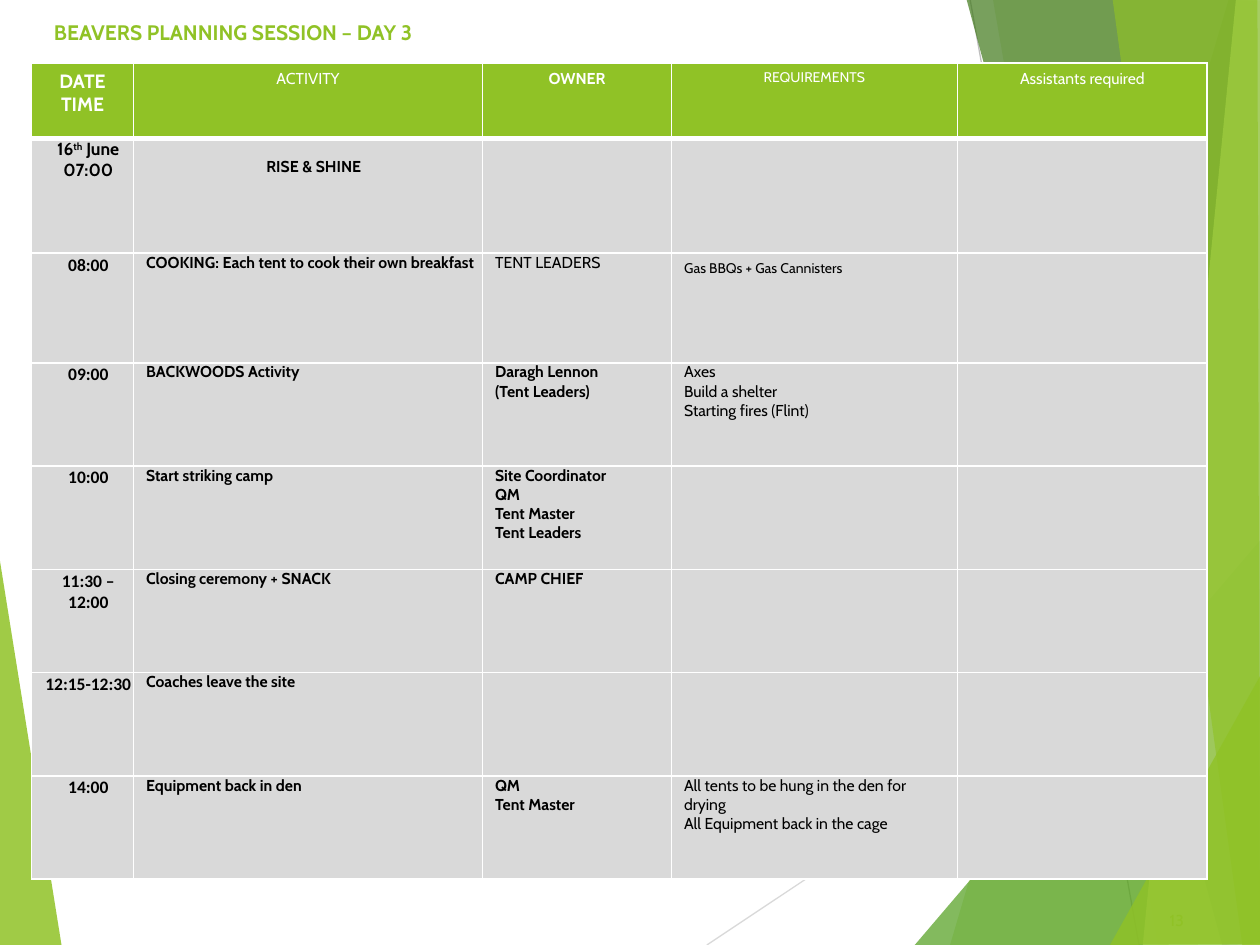
from dataclasses import dataclass, replace

from lxml import etree
from pptx import Presentation
from pptx.dml.color import RGBColor
from pptx.enum.shapes import MSO_CONNECTOR as Link
from pptx.enum.text import MSO_ANCHOR as Anchor, PP_ALIGN as Align
from pptx.oxml.ns import qn
from pptx.util import Inches, Pt

GREEN, GREY, WHITE, BLACK = "90C226", "D9D9D9", "FFFFFF", "000000"


@dataclass(frozen=True)
class Facet:
    points: tuple
    color: str
    alpha: int


@dataclass(frozen=True)
class Ray:
    start: tuple
    end: tuple
    color: str


@dataclass(frozen=True)
class Style:
    size: float
    bold: bool = True
    color: str = BLACK
    face: str = "Cabin"
    align: Align = Align.LEFT
    inset: tuple = (0.1, 0.05, 0.1, 0.05)


@dataclass(frozen=True)
class Entry:
    text: str
    style: Style


HEAD = Style(9, False, WHITE, align=Align.CENTER)
TIME = Style(10, face="Calibri", align=Align.CENTER, inset=(0.1, 0.01, 0.01, 0))
DATE = replace(TIME, face="Cabin", inset=(0.1, 0, 0.01, 0))
TASK = Style(9, inset=(0.1, 0, 0.07, 0))
RISE = replace(TASK, align=Align.CENTER, inset=(0.1, 0.15, 0.01, 0))
OWNER = Style(9, inset=(0.1, 0, 0.1, 0.05))
NEED = replace(OWNER, bold=False)
TITLE = Style(12, color=GREEN)

LEFT = Facet(((-0.01, 4.39), (0.49, 7.51), (-0.01, 7.5)), GREEN, 85)
RAYS = [
    Ray((5.61, 7.5), (10.01, 4.57), "D9D9D9"),
    Ray((7.7, 0), (9.04, 7.5), "BFBFBF"),
]
RIGHT = [
    Facet(((9.75, 0), (7.54, 7.5), (10.02, 7.51), (10.01, 0.01)), GREEN, 30),
    Facet(((7.88, -0.01), (9.19, 7.5), (10.01, 7.5), (10.01, -0.01)), GREEN, 20),
    Facet(((7.26, 7.5), (10, 4.29), (10.01, 7.5)), "54A021", 72),
    Facet(((7.67, -0.01), (9.7, 7.5), (10.01, 7.49), (10.01, -0.01)), "3F7819", 70),
    Facet(((9.81, -0.01), (9.07, 7.5), (10.01, 7.5), (10, -0.01)), "C0E474", 70),
    Facet(((8.83, -0.01), (9.86, 7.5), (10, 7.5), (9.98, -0.01)), GREEN, 65),
    Facet(((8.81, 7.5), (10.01, 5.35), (10.01, 7.49)), GREEN, 80),
]

WIDTHS = [0.81, 2.77, 1.5, 2.27, 1.98]
HEIGHTS = [0.6, 0.91, 0.87] + [0.82] * 5
HEADS = [
    Entry("DATE\nTIME", replace(HEAD, size=11, bold=True)),
    Entry("ACTIVITY", HEAD),
    Entry("OWNER", replace(HEAD, bold=True)),
    Entry("REQUIREMENTS", replace(HEAD, size=8)),
    Entry("Assistants required", HEAD),
]
# A part between carets is raised.
FIRST = [Entry("16^th^ June\n07:00", DATE), Entry("RISE & SHINE", RISE)]
COOK = [
    Entry("08:00", TIME),
    Entry("COOKING: Each tent to cook their own breakfast", TASK),
    Entry("TENT LEADERS", NEED),
    Entry("Gas BBQs + Gas Cannisters", Style(8, False)),
]
PLAN = [
    ("09:00", "BACKWOODS Activity", "Daragh Lennon\n(Tent Leaders)",
     "Axes\nBuild a shelter\nStarting fires (Flint)"),
    ("10:00", "Start striking camp",
     "Site Coordinator\nQM\nTent Master\nTent Leaders"),
    ("11:30 – 12:00", "Closing ceremony + SNACK", "CAMP CHIEF"),
    ("12:15-12:30", "Coaches leave the site"),
    ("14:00", "Equipment back in den", "QM\nTent Master",
     "All tents to be hung in the den for drying\nAll Equipment back in the cage"),
]


def rgb(color: str) -> RGBColor:
    return RGBColor.from_string(color)


def draw_facet(slide, facet: Facet) -> None:
    points = [(Inches(x), Inches(y)) for x, y in facet.points]
    pen = slide.shapes.build_freeform(*points[0])
    pen.add_line_segments(points[1:], close=True)
    shape = pen.convert_to_shape()
    shape.shadow.inherit = False
    shape.line.fill.background()
    shape.fill.solid()
    shape.fill.fore_color.rgb = rgb(facet.color)
    tint = shape.element.spPr.find(f"{qn('a:solidFill')}/{qn('a:srgbClr')}")
    etree.SubElement(tint, qn("a:alpha")).set("val", str(facet.alpha * 1000))


def draw_ray(slide, ray: Ray) -> None:
    ends = [Inches(v) for v in ray.start + ray.end]
    line = slide.shapes.add_connector(Link.STRAIGHT, *ends)
    line.line.color.rgb = rgb(ray.color)
    line.line.width = Pt(0.75)
    etree.SubElement(line.element.spPr, qn("a:effectLst"))


def write(frame, entry: Entry) -> None:
    style = entry.style
    frame.text = entry.text.replace("^", "")
    for para, text in zip(frame.paragraphs, entry.text.split("\n")):
        para.alignment = style.align
        if "^" in text:
            para.clear()
            for i, part in enumerate(text.split("^")):
                run = para.add_run()
                run.text = part
                if i % 2:
                    run.font._element.set("baseline", "30000")
        for run in para.runs:
            font = run.font
            font.size, font.bold, font.name = Pt(style.size), style.bold, style.face
            font.color.rgb = rgb(style.color)


def add_text(slide, box: tuple, entry: Entry) -> None:
    frame = slide.shapes.add_textbox(*map(Inches, box)).text_frame
    frame.word_wrap = True
    frame.vertical_anchor = Anchor.MIDDLE
    write(frame, entry)


def paint(cell, fill: str, base: float) -> None:
    """Fill the cell and rule its four sides in white."""
    cell.fill.solid()
    cell.fill.fore_color.rgb = rgb(fill)
    props = cell._tc.get_or_add_tcPr()
    for i, side in enumerate("LRTB"):
        width = base if side == "B" else 1
        rule = etree.Element(qn(f"a:ln{side}"), w=str(Pt(width)))
        paint_fill = etree.SubElement(rule, qn("a:solidFill"))
        etree.SubElement(paint_fill, qn("a:srgbClr"), val=WHITE)
        props.insert(i, rule)


def add_plan(slide, rows: list) -> None:
    table = slide.shapes.add_table(
        len(HEIGHTS), len(WIDTHS), Inches(0.25), Inches(0.5),
        Inches(sum(WIDTHS)), Inches(sum(HEIGHTS))).table
    for col, width in zip(table.columns, WIDTHS):
        col.width = Inches(width)
    for r, (row, height) in enumerate(zip(table.rows, HEIGHTS)):
        row.height = Inches(height)
        for cell in row.cells:
            paint(cell, GREY if r else GREEN, 1 if r else 3)
        for cell, entry in zip(row.cells, rows[r]):
            (cell.margin_left, cell.margin_top, cell.margin_right,
             cell.margin_bottom) = map(Inches, entry.style.inset)
            write(cell.text_frame, entry)


def main() -> None:
    deck = Presentation()
    deck.slide_width, deck.slide_height = Inches(10), Inches(7.5)
    slide = deck.slides.add_slide(deck.slide_layouts[6])
    draw_facet(slide, LEFT)
    for ray in RAYS:
        draw_ray(slide, ray)
    for facet in RIGHT:
        draw_facet(slide, facet)
    add_text(slide, (0.33, -0.08, 9.25, 0.67),
             Entry("BEAVERS PLANNING SESSION – DAY 3", TITLE))
    add_text(slide, (9.09, 7.1, 0.5, 0.4),
             Entry("13", Style(9, False, GREEN, align=Align.CENTER)))
    body = [[Entry(*pair) for pair in zip(texts, (TIME, TASK, OWNER, NEED))]
            for texts in PLAN]
    add_plan(slide, [HEADS, FIRST, COOK] + body)
    deck.save("out.pptx")


if __name__ == "__main__":
    main()
